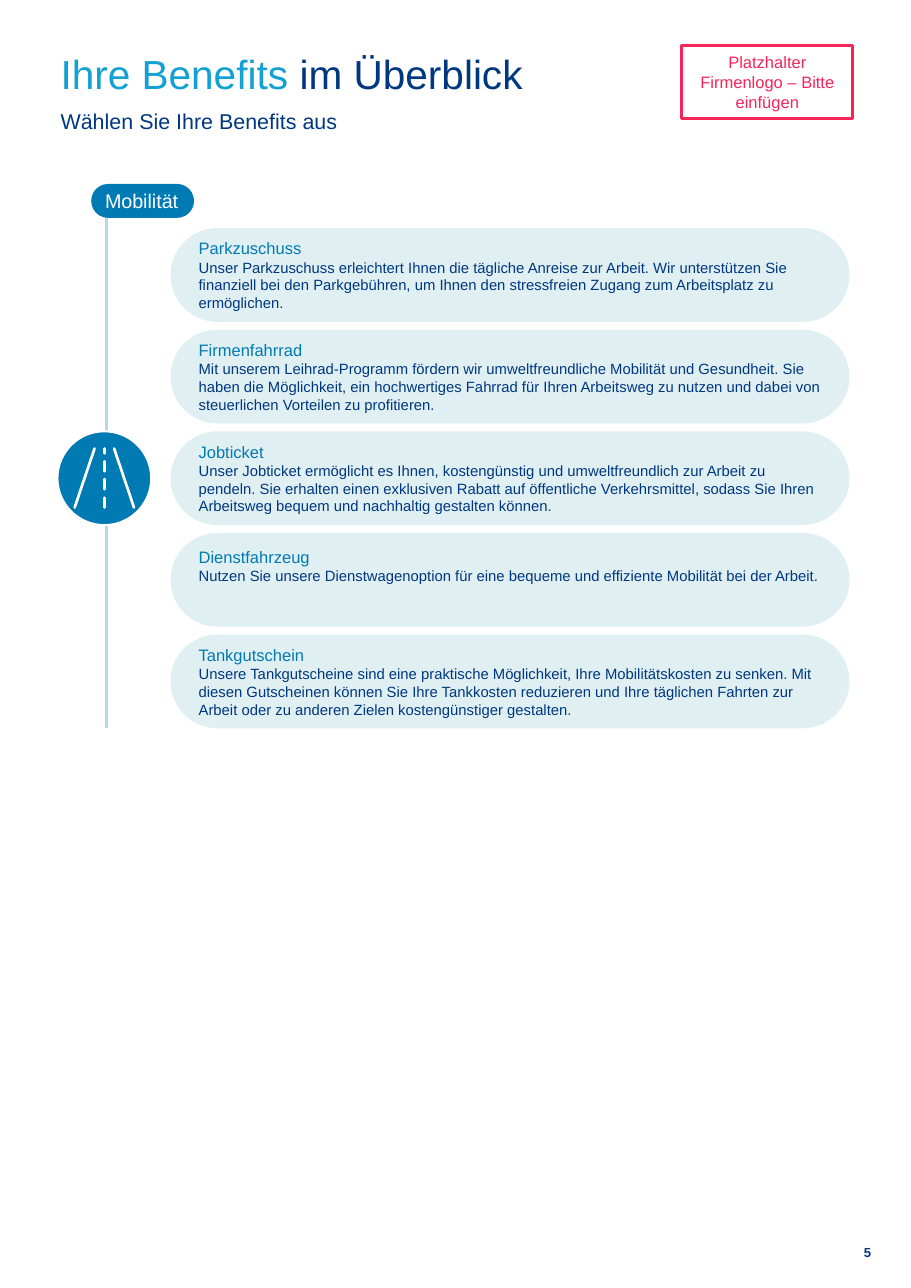
import pptx
import pptx.util
import pptx.dml.color
import pptx.enum.shapes
import pptx.enum.text
import pptx.oxml.ns
import lxml.etree

Pt = pptx.util.Pt
SHAPES = pptx.enum.shapes.MSO_SHAPE
ALIGN = pptx.enum.text.PP_ALIGN
ANCHOR = pptx.enum.text.MSO_ANCHOR

NAVY, BLUE, SKY = "003781", "007AB3", "13A0D3"
PALE, RAIL, WHITE, PINK = "DFEFF2", "B5DAE6", "FFFFFF", "F62459"

BENEFITS = [
    ("Parkzuschuss", "Unser Parkzuschuss erleichtert Ihnen die tägliche Anreise zur Arbeit. Wir unterstützen Sie finanziell bei den Parkgebühren, um Ihnen den stressfreien Zugang zum Arbeitsplatz zu ermöglichen.", ANCHOR.MIDDLE),
    ("Firmenfahrrad", "Mit unserem Leihrad-Programm fördern wir umweltfreundliche Mobilität und Gesundheit. Sie haben die Möglichkeit, ein hochwertiges Fahrrad für Ihren Arbeitsweg zu nutzen und dabei von steuerlichen Vorteilen zu profitieren.", ANCHOR.MIDDLE),
    ("Jobticket", "Unser Jobticket ermöglicht es Ihnen, kostengünstig und umweltfreundlich zur Arbeit zu pendeln. Sie erhalten einen exklusiven Rabatt auf öffentliche Verkehrsmittel, sodass Sie Ihren Arbeitsweg bequem und nachhaltig gestalten können.", ANCHOR.MIDDLE),
    ("Dienstfahrzeug", "Nutzen Sie unsere Dienstwagenoption für eine bequeme und effiziente Mobilität bei der Arbeit.", ANCHOR.TOP),
    ("Tankgutschein", "Unsere Tankgutscheine sind eine praktische Möglichkeit, Ihre Mobilitätskosten zu senken. Mit diesen Gutscheinen können Sie Ihre Tankkosten reduzieren und Ihre täglichen Fahrten zur Arbeit oder zu anderen Zielen kostengünstiger gestalten.", ANCHOR.MIDDLE),
]


def color(value):
    return pptx.dml.color.RGBColor.from_string(value)


class Page:
    font_name = "Arial"

    def __init__(self, slide):
        self.slide = slide

    def style(self, font, size, ink, bold=False):
        font.name = self.font_name
        font.size = Pt(size)
        font.bold = bold
        font.color.rgb = color(ink)

    def frame(self, shape, margins, anchor, wrap=True):
        frame = shape.text_frame
        frame.margin_left, frame.margin_top, frame.margin_right, frame.margin_bottom = map(Pt, margins)
        frame.vertical_anchor = anchor
        frame.word_wrap = wrap
        return frame

    def add_lines(self, frame, lines, align=ALIGN.LEFT):
        for index, (text, size, ink) in enumerate(lines):
            paragraph = frame.add_paragraph() if index else frame.paragraphs[0]
            paragraph.text = text
            paragraph.alignment = align
            self.style(paragraph.font, size, ink)

    def shape(self, kind, left, top, width, height, fill=None, line=None, weight=1):
        shape = self.slide.shapes.add_shape(kind, Pt(left), Pt(top), Pt(width), Pt(height))
        shape.shadow.inherit = False
        if fill:
            shape.fill.solid()
            shape.fill.fore_color.rgb = color(fill)
        else:
            shape.fill.background()
        if line:
            shape.line.color.rgb = color(line)
            shape.line.width = Pt(weight)
        else:
            shape.line.fill.background()
        return shape

    def pill(self, left, top, width, height, fill):
        shape = self.shape(SHAPES.ROUNDED_RECTANGLE, left, top, width, height, fill)
        shape.adjustments[0] = 0.5
        return shape

    def text_box(self, left, top, width, height, anchor):
        box = self.slide.shapes.add_textbox(Pt(left), Pt(top), Pt(width), Pt(height))
        return self.frame(box, (0, 0, 0, 0), anchor)

    def line(self, start_x, start_y, end_x, end_y, ink, weight, round_cap=False):
        connector = self.slide.shapes.add_connector(
            pptx.enum.shapes.MSO_CONNECTOR.STRAIGHT, Pt(start_x), Pt(start_y), Pt(end_x), Pt(end_y))
        connector.line.color.rgb = color(ink)
        connector.line.width = Pt(weight)
        properties = connector._element.spPr
        if round_cap:
            properties.find(pptx.oxml.ns.qn("a:ln")).set("cap", "rnd")
        lxml.etree.SubElement(properties, pptx.oxml.ns.qn("a:effectLst"))

    def heading(self):
        paragraph = self.text_box(39.6, 41, 440.6, 48.2, ANCHOR.TOP).paragraphs[0]
        paragraph.line_spacing = Pt(23.1)
        for text, size, ink in [("Ihre Benefits ", 26.5, SKY), ("im Überblick", 26.5, NAVY),
                                ("Wählen Sie Ihre Benefits aus", 14, NAVY)]:
            if size == 14:
                paragraph.add_line_break()
            run = paragraph.add_run()
            run.text = text
            self.style(run.font, size, ink)

    def logo_space(self):
        shape = self.shape(SHAPES.RECTANGLE, 445.7, 29.5, 111.8, 48.2, line=PINK, weight=2)
        frame = self.frame(shape, (7.2, 3.6, 7.2, 3.6), ANCHOR.MIDDLE)
        self.add_lines(frame, [("Platzhalter\vFirmenlogo – Bitte einfügen", 10.8, PINK)], ALIGN.CENTER)

    def page_number(self, number):
        frame = self.text_box(546.5, 812.2, 23, 12.2, ANCHOR.MIDDLE)
        self.add_lines(frame, [(str(number), 8.6, NAVY)], ALIGN.RIGHT)
        paragraph = frame.paragraphs[0]
        paragraph.line_spacing = Pt(10.8)
        paragraph.font.bold = True

    def category(self, name):
        shape = self.pill(59.6, 120.2, 67.2, 22.2, BLUE)
        frame = self.frame(shape, (5.8, 0, 5.8, 0), ANCHOR.MIDDLE, wrap=False)
        self.add_lines(frame, [(name, 12.9, WHITE)])

    def benefit(self, top, name, description, anchor):
        shape = self.pill(111.5, top, 443.8, 61.2, PALE)
        frame = self.frame(shape, (9.4, 0, 5.8, 0), anchor)
        self.add_lines(frame, [(name, 10.8, BLUE), (description, 9.7, NAVY)])

    def road_icon(self, left, top):
        self.shape(SHAPES.OVAL, left, top, 61.2, 61.2, BLUE, WHITE, 1.25)
        middle = left + 30.6
        for side in (-1, 1):
            self.line(middle + side * 6.4, top + 11.2, middle + side * 19.4, top + 49.8, WHITE, 1.75, True)
        for start, end in [(11.2, 14.4), (19.6, 26), (31.2, 37.8), (43.4, 49.8)]:
            self.line(middle, top + start, middle, top + end, WHITE, 1.75, True)


def main():
    presentation = pptx.Presentation()
    presentation.slide_width = Pt(595.44)
    presentation.slide_height = Pt(841.68)
    page = Page(presentation.slides.add_slide(presentation.slide_layouts[6]))
    first_top, pitch = 149.1, 66.4
    page.line(69.7, 475.9, 69.7, 130.3, RAIL, 2)
    page.page_number(5)
    page.category("Mobilität")
    for index, benefit in enumerate(BENEFITS):
        page.benefit(first_top + index * pitch, *benefit)
    page.road_icon(37.6, first_top + 2 * pitch)
    page.heading()
    page.logo_space()
    presentation.save("out.pptx")


if __name__ == "__main__":
    main()
